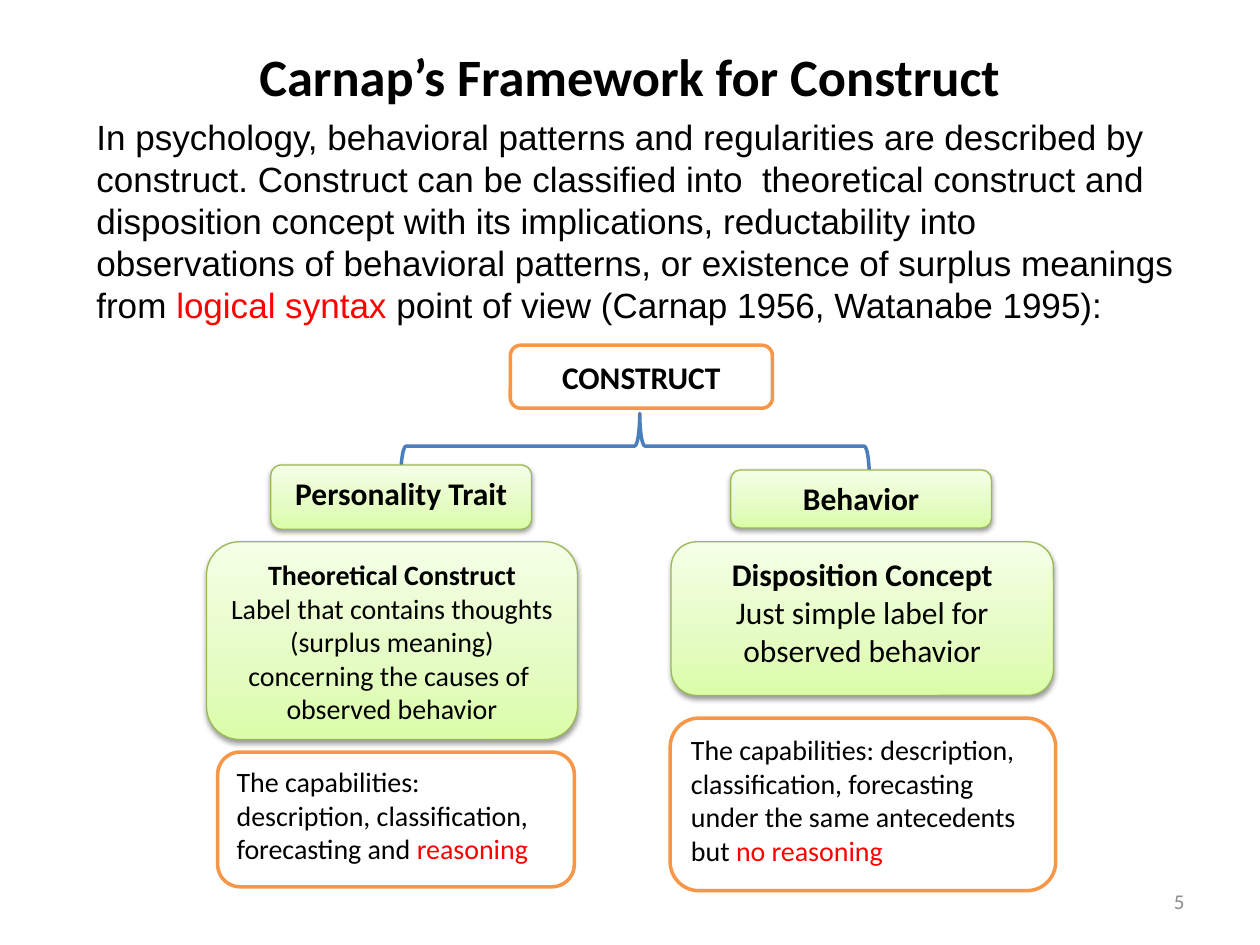
from lxml import etree
from pptx import Presentation
from pptx.dml.color import RGBColor
from pptx.enum.shapes import MSO_SHAPE
from pptx.enum.text import MSO_ANCHOR, MSO_AUTO_SIZE, PP_ALIGN
from pptx.oxml.ns import qn
from pptx.util import Pt

ROUNDED, BRACE = MSO_SHAPE.ROUNDED_RECTANGLE, MSO_SHAPE.RIGHT_BRACE
TOP, MIDDLE = MSO_ANCHOR.TOP, MSO_ANCHOR.MIDDLE
LEFT, CENTER, RIGHT = PP_ALIGN.LEFT, PP_ALIGN.CENTER, PP_ALIGN.RIGHT

COLORS = {
    "text": "000000", "accent": "FF0000", "muted": "8C8C8C", "paper": "FFFFFF",
    "orange": "F79646", "blue": "4B7EBC", "green": "98B955",
}
GREEN_STOPS = [(0, "DAFDA7"), (35, "E4FCC2"), (100, "F5FFE7")]

# A paragraph is a list of (text, style) spans; style is "", "bold" or "accent".
TITLE = [[("Carnap’s Framework for Construct", "bold")]]
INTRO = [[
    ("In psychology, behavioral patterns and regularities are described by "
     "construct. Construct can be classified into  theoretical construct and "
     "disposition concept with its implications, reductability into "
     "observations of behavioral patterns, or existence of surplus meanings "
     "from ", ""),
    ("logical syntax", "accent"),
    (" point of view (Carnap 1956, Watanabe 1995):", ""),
]]
ROOT = [[("CONSTRUCT", "bold")]]
PAGE_NUMBER = [[("5", "")]]

# Each green box: (left, top, width, height), text size, paragraphs
GREEN_BOXES = [
    ((118, 309.6, 212, 113), 16, [
        [("Theoretical Construct", "bold")],
        [("Label that contains thoughts (surplus meaning) concerning the "
          "causes of ", "")],
        [("observed behavior", "")],
    ]),
    ((383.5, 309.6, 218.5, 87.8), 18, [
        [("Disposition Concept", "bold")],
        [("Just simple label for observed behavior", "")],
    ]),
    ((154.8, 265.7, 149, 36.7), 18, [[("Personality Trait", "bold")]]),
    ((417.6, 268.6, 149, 33.1), 18, [[("Behavior", "bold")]]),
]
CAPABILITY_BOXES = [
    ((124.4, 429.8, 203.8, 77), [[
        ("The capabilities: description, classification, forecasting and ", ""),
        ("reasoning", "accent"),
    ]]),
    ((383, 410.4, 220.3, 98.6), [[
        ("The capabilities: description, classification, forecasting under "
         "the same antecedents but ", ""),
        ("no reasoning", "accent"),
    ]]),
]


def rgb(name):
    return RGBColor.from_string(COLORS[name])


def write_text(shape, paragraphs, size, font="Calibri", color="text",
               align=LEFT, anchor=TOP):
    frame = shape.text_frame
    frame.word_wrap = True
    frame.auto_size = MSO_AUTO_SIZE.NONE
    frame.vertical_anchor = anchor
    for index, spans in enumerate(paragraphs):
        para = frame.add_paragraph() if index else frame.paragraphs[0]
        para.alignment = align
        for text, style in spans:
            span = para.add_run()
            span.text = text
            span.font.name = font
            span.font.size = Pt(size)
            span.font.bold = style == "bold"
            span.font.color.rgb = rgb("accent" if style == "accent" else color)


def add_text_box(page, place, paragraphs, size, **style):
    box = page.shapes.add_textbox(*map(Pt, place))
    write_text(box, paragraphs, size, **style)


def add_outline(page, kind, place, color, width=2, fill=None):
    shape = page.shapes.add_shape(kind, *map(Pt, place))
    shape.shadow.inherit = False
    shape.line.color.rgb = rgb(color)
    shape.line.width = Pt(width)
    if fill:
        shape.fill.solid()
        shape.fill.fore_color.rgb = rgb(fill)
    else:
        shape.fill.background()
    return shape


def add_child(parent, tag, **attributes):
    return etree.SubElement(parent, qn(tag), attributes)


def add_green_look(shape):
    """Fill with the three-stop green gradient and add a soft shadow below."""
    shape.fill.gradient()
    shape.fill.gradient_angle = 90
    properties = shape._element.spPr
    stops = properties.find(".//" + qn("a:gsLst"))
    for old_stop in list(stops):
        stops.remove(old_stop)
    for percent, color in GREEN_STOPS:
        stop = add_child(stops, "a:gs", pos=str(percent * 1000))
        add_child(stop, "a:srgbClr", val=color)
    shadow = add_child(properties.find(qn("a:effectLst")), "a:outerShdw",
                       blurRad=str(Pt(3.1)), dist=str(Pt(1.6)),
                       dir="5400000", rotWithShape="0")
    shade = add_child(shadow, "a:srgbClr", val=COLORS["text"])
    add_child(shade, "a:alpha", val="38000")


def main():
    deck = Presentation()
    deck.slide_width, deck.slide_height = Pt(720), Pt(540)
    page = deck.slides.add_slide(deck.slide_layouts[5])

    title = page.shapes.title
    title.left, title.top, title.width, title.height = map(
        Pt, (36, 21.6, 648, 38.9))
    write_text(title, TITLE, 30, align=CENTER)

    add_text_box(page, (516, 500.5, 168, 28.8), PAGE_NUMBER, 12,
                 color="muted", align=RIGHT, anchor=MIDDLE)
    add_text_box(page, (48, 62.6, 636, 128.2), INTRO, 20, font="Arial")

    root = add_outline(page, ROUNDED, (291.6, 197.3, 149.8, 36), "orange")
    write_text(root, ROOT, 18, align=CENTER, anchor=MIDDLE)

    brace = add_outline(page, BRACE, (344.2, 121, 37.4, 267.8), "blue")
    brace.rotation = 270
    brace.adjustments[0], brace.adjustments[1] = 0.08, 0.51

    for place, size, paragraphs in GREEN_BOXES:
        box = add_outline(page, ROUNDED, place, "green", width=0.75)
        add_green_look(box)
        write_text(box, paragraphs, size, align=CENTER)

    for place, paragraphs in CAPABILITY_BOXES:
        box = add_outline(page, ROUNDED, place, "orange", fill="paper")
        write_text(box, paragraphs, 16)

    deck.save("out.pptx")


if __name__ == "__main__":
    main()
